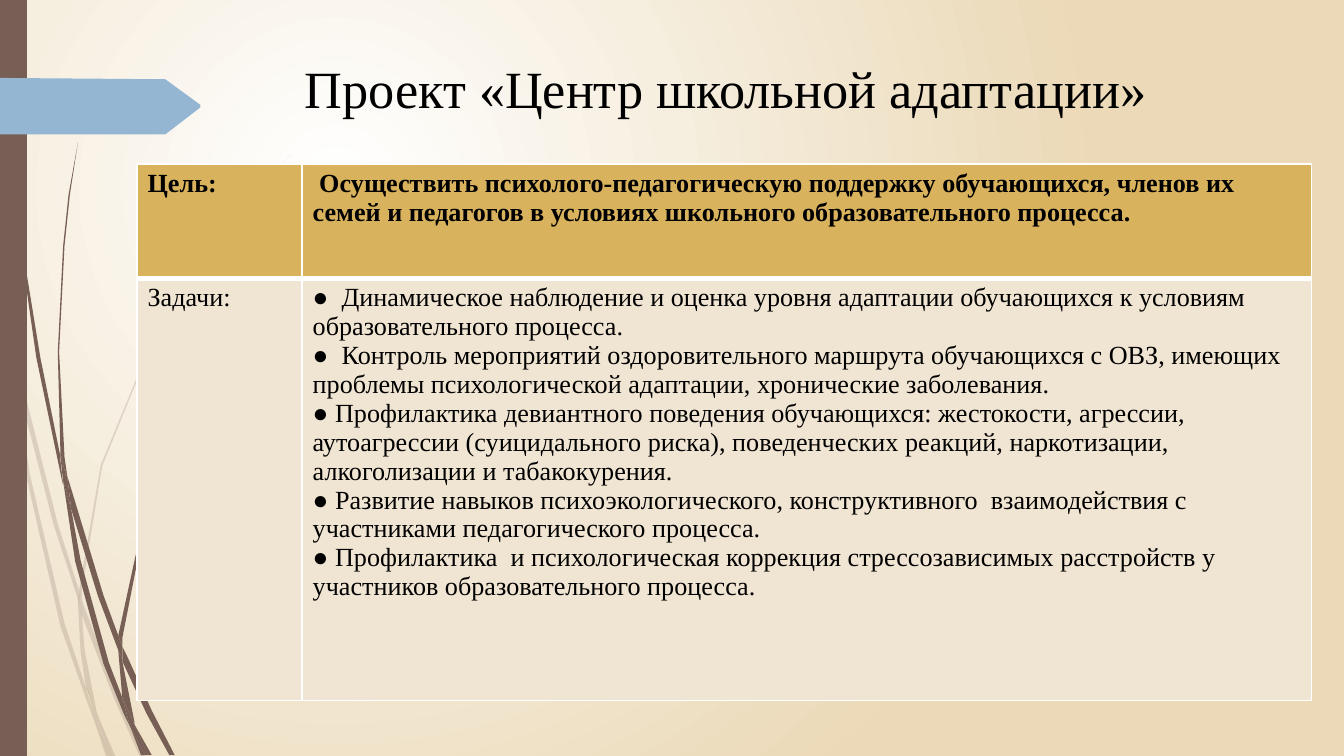
from dataclasses import dataclass

from lxml import etree
from pptx import Presentation
from pptx import util as u
from pptx.dml.color import RGBColor
from pptx.enum import shapes, text
from pptx.oxml import ns


@dataclass(frozen=True)
class Theme:
    font: str = "Times New Roman"
    title_size: int = 28
    table_size: int = 14
    ink: str = "000000"
    brown: str = "775F55"
    blue: str = "94B6D2"
    gold: str = "D8B25C"
    cream: str = "F0E4D2"
    sand: str = "EBD9B7"
    white: str = "FFFFFF"


THEME = Theme()
UNIT = u.Cm(2.54) / 100  # outline coordinates are hundredths of an inch

# Blades of grass, each an outline of x, y points
PALE_GRASS = [
    [(8, 263), (6, 241), (0, 211), (0, 224), (7, 258)],
    [(40, 391), (59, 449), (59, 440), (43, 390), (10, 259), (12, 282)],
    [(64, 455), (61, 447), (61, 458), (85, 520), (104, 563), (108, 563), (88, 519)],
    [(83, 563), (86, 563), (73, 533)],
    [(64, 512), (48, 464), (22, 352), (12, 282), (8, 263), (19, 352), (45, 466),
     (64, 520), (70, 536), (69, 530)],
    [(58, 449), (60, 485), (64, 512), (67, 519), (73, 533), (72, 530), (63, 484),
     (61, 458), (61, 456)],
    [(61, 438), (76, 347), (111, 261), (159, 184), (187, 148), (201, 131), (217, 115),
     (201, 131), (186, 148), (158, 183), (110, 261), (75, 346), (59, 438), (59, 440),
     (61, 447)],
    [(70, 536), (79, 563), (82, 563)],
    [(61, 456), (61, 458), (61, 447), (59, 440), (58, 449)],
    [(67, 519), (65, 512), (69, 530), (70, 536), (82, 563), (83, 563), (73, 533)],
]
DARK_GRASS = [
    [(5, 82), (14, 175), (27, 266), (46, 357), (47, 361), (45, 343), (45, 340),
     (30, 266), (15, 174), (6, 82), (4, 36), (3, 0), (2, 0), (3, 36)],
    [(73, 444), (88, 484), (88, 475), (88, 473), (77, 443), (50, 354), (53, 379)],
    [(94, 487), (91, 481), (91, 492), (109, 531), (126, 562), (130, 562), (113, 529)],
    [(91, 519), (81, 493), (60, 417), (53, 379), (47, 358), (56, 418), (77, 494),
     (92, 531), (97, 541), (96, 538)],
    [(50, 354), (48, 340), (44, 262), (48, 183), (52, 145), (58, 106), (51, 145),
     (47, 183), (43, 262), (45, 337), (49, 354)],
    [(110, 562), (113, 562), (100, 539)],
    [(47, 358), (53, 379), (50, 354), (49, 354), (45, 337), (45, 340)],
    [(91, 475), (103, 414), (131, 357), (169, 305), (191, 281), (203, 269), (216, 258),
     (215, 258), (203, 269), (191, 280), (168, 304), (129, 356), (101, 413), (88, 473),
     (91, 481)],
    [(97, 541), (105, 562), (108, 562)],
    [(88, 484), (91, 519), (96, 530), (100, 539), (100, 537), (91, 492), (90, 488)],
    [(88, 484), (90, 488), (91, 492), (91, 481), (88, 473), (88, 475)],
    [(96, 530), (91, 519), (96, 538), (97, 541), (108, 562), (110, 562), (100, 539)],
]
ARROW_TAB = [(149, 80), (123, 100), (0, 100), (0, 58), (123, 59), (149, 78)]

TITLE = "Проект «Центр школьной адаптации»"
GOAL = (" Осуществить психолого-педагогическую поддержку обучающихся, членов их "
        "семей и педагогов в условиях школьного образовательного процесса.")
TASKS = [
    "●  Динамическое наблюдение и оценка уровня адаптации обучающихся к условиям "
    "образовательного процесса.",
    "●  Контроль мероприятий оздоровительного маршрута обучающихся с ОВЗ, имеющих "
    "проблемы психологической адаптации, хронические заболевания.",
    "● Профилактика девиантного поведения обучающихся: жестокости, агрессии, "
    "аутоагрессии (суицидального риска), поведенческих реакций, наркотизации, "
    "алкоголизации и табакокурения.",
    "● Развитие навыков психоэкологического, конструктивного  взаимодействия с "
    "участниками педагогического процесса.",
    "● Профилактика  и психологическая коррекция стрессозависимых расстройств у "
    "участников образовательного процесса.",
]


def rgb(color):
    return RGBColor.from_string(color)


def paint(shape, color, alpha=None):
    shape.shadow.inherit = False
    shape.fill.solid()
    shape.fill.fore_color.rgb = rgb(color)
    shape.line.fill.background()
    if alpha:
        tint = shape.fill._xPr.find(".//" + ns.qn("a:srgbClr"))
        etree.SubElement(tint, ns.qn("a:alpha"), val=str(alpha * 1000))


def add_outline(parent, points, color, alpha=None):
    builder = parent.build_freeform(*points[0], scale=UNIT)
    builder.add_line_segments(points[1:], close=True)
    paint(builder.convert_to_shape(), color, alpha)


def add_grass(slide, blades, alpha=None):
    clump = slide.shapes.add_group_shape()
    for blade in blades:
        add_outline(clump.shapes, blade, THEME.brown, alpha)


def set_background(slide):
    fill = slide.background.fill
    fill.gradient()
    for stop, color in zip(fill.gradient_stops, (THEME.white, THEME.sand)):
        stop.color.rgb = rgb(color)
    # Radial glow in the upper left instead of a linear blend
    gradient = slide.background._cSld.find(".//" + ns.qn("a:gradFill"))
    linear = gradient.find(ns.qn("a:lin"))
    radial = etree.Element(ns.qn("a:path"), {"path": "circle"})
    etree.SubElement(radial, ns.qn("a:fillToRect"),
                     l="50000", t="50000", r="100000", b="100000")
    gradient.replace(linear, radial)


def format_text(frame, size, bold=False):
    for paragraph in frame.paragraphs:
        for run in paragraph.runs:
            run.font.name = THEME.font
            run.font.size = u.Pt(size)
            run.font.bold = bold
            run.font.color.rgb = rgb(THEME.ink)


def set_title(slide):
    title = slide.shapes.title
    title.left, title.top = u.Cm(3.91), u.Cm(0.84)
    title.width, title.height = u.Cm(19.61), u.Cm(1.65)
    frame = title.text_frame
    frame.text = TITLE
    frame.vertical_anchor = text.MSO_ANCHOR.MIDDLE
    frame.paragraphs[0].alignment = text.PP_ALIGN.CENTER
    format_text(frame, THEME.title_size)


def set_borders(cell, **widths):
    properties = cell._tc.get_or_add_tcPr()
    for index, side in enumerate("LRTB"):
        line = etree.Element(ns.qn("a:ln" + side), w=str(u.Pt(widths.get(side, 1))))
        fill = etree.SubElement(line, ns.qn("a:solidFill"))
        etree.SubElement(fill, ns.qn("a:srgbClr"), val=THEME.white)
        properties.insert(index, line)


def fill_cell(cell, wording, color, bold, **borders):
    cell.text_frame.text = wording
    cell.margin_left = cell.margin_right = u.Cm(0.2)
    cell.margin_top = cell.margin_bottom = u.Cm(0.1)
    cell.fill.solid()
    cell.fill.fore_color.rgb = rgb(color)
    format_text(cell.text_frame, THEME.table_size, bold)
    set_borders(cell, **borders)


def add_project_table(slide):
    widths, heights = (u.Cm(3.12), u.Cm(19.08)), (u.Cm(2.16), u.Cm(7.98))
    table = slide.shapes.add_table(2, 2, u.Cm(2.59), u.Cm(3.1),
                                   sum(widths), sum(heights)).table
    for column, width in zip(table.columns, widths):
        column.width = width
    for row, height in zip(table.rows, heights):
        row.height = height
    for column, wording in enumerate(("Цель:", GOAL)):
        fill_cell(table.cell(0, column), wording, THEME.gold, True, B=3)
    for column, wording in enumerate(("Задачи:", "\n".join(TASKS))):
        fill_cell(table.cell(1, column), wording, THEME.cream, False, T=3)


def main():
    deck = Presentation()
    deck.slide_width, deck.slide_height = u.Cm(25.4), u.Cm(14.29)
    slide = deck.slides.add_slide(deck.slide_layouts[5])
    set_background(slide)

    # Grass, side band and arrow tab
    add_grass(slide, PALE_GRASS, alpha=20)
    add_grass(slide, DARK_GRASS)
    band = slide.shapes.add_shape(shapes.MSO_SHAPE.RECTANGLE, 0, 0,
                                  u.Cm(0.51), deck.slide_height)
    paint(band, THEME.brown)
    add_outline(slide.shapes, ARROW_TAB, THEME.blue)

    # Content
    set_title(slide)
    add_project_table(slide)
    deck.save("out.pptx")


if __name__ == "__main__":
    main()
